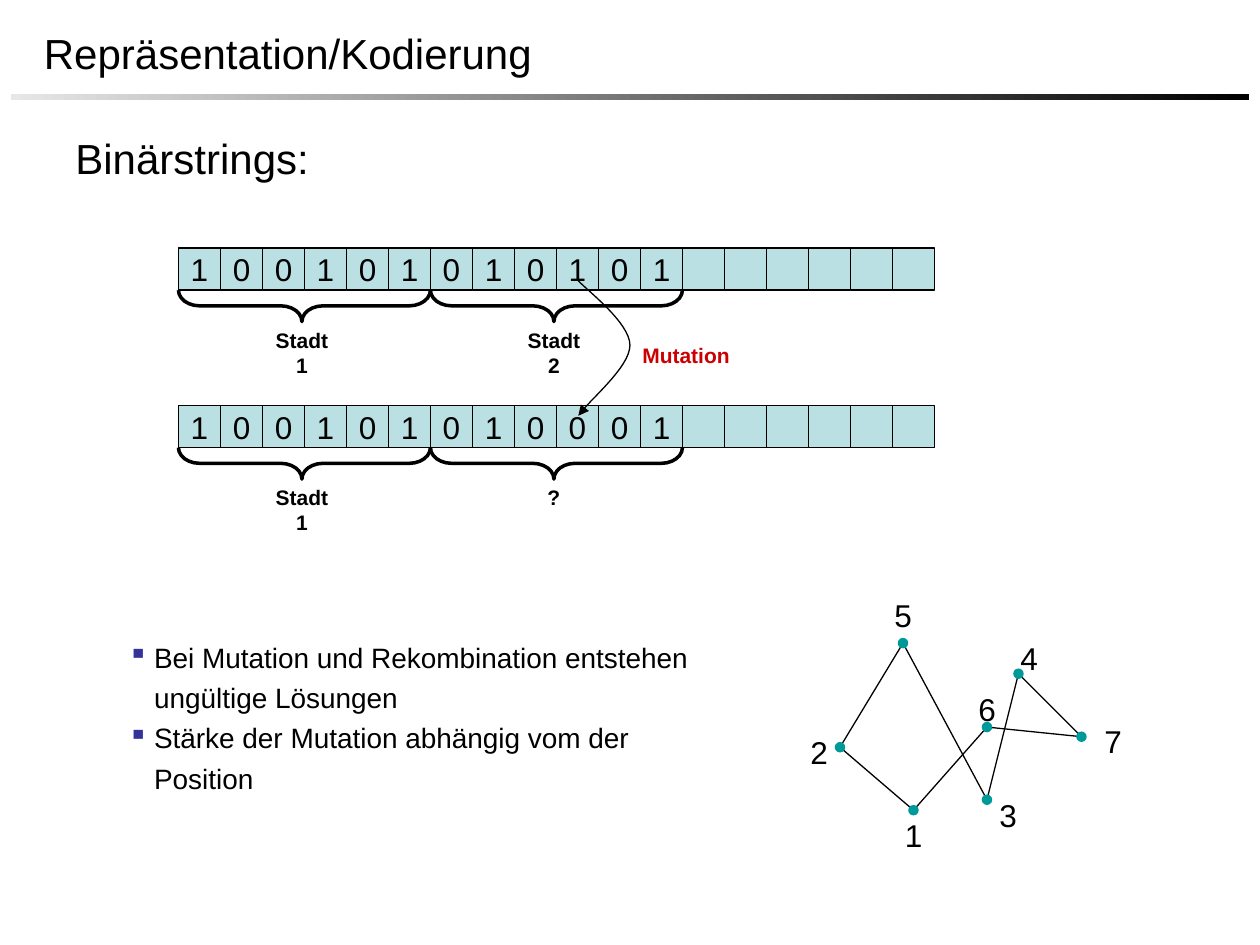
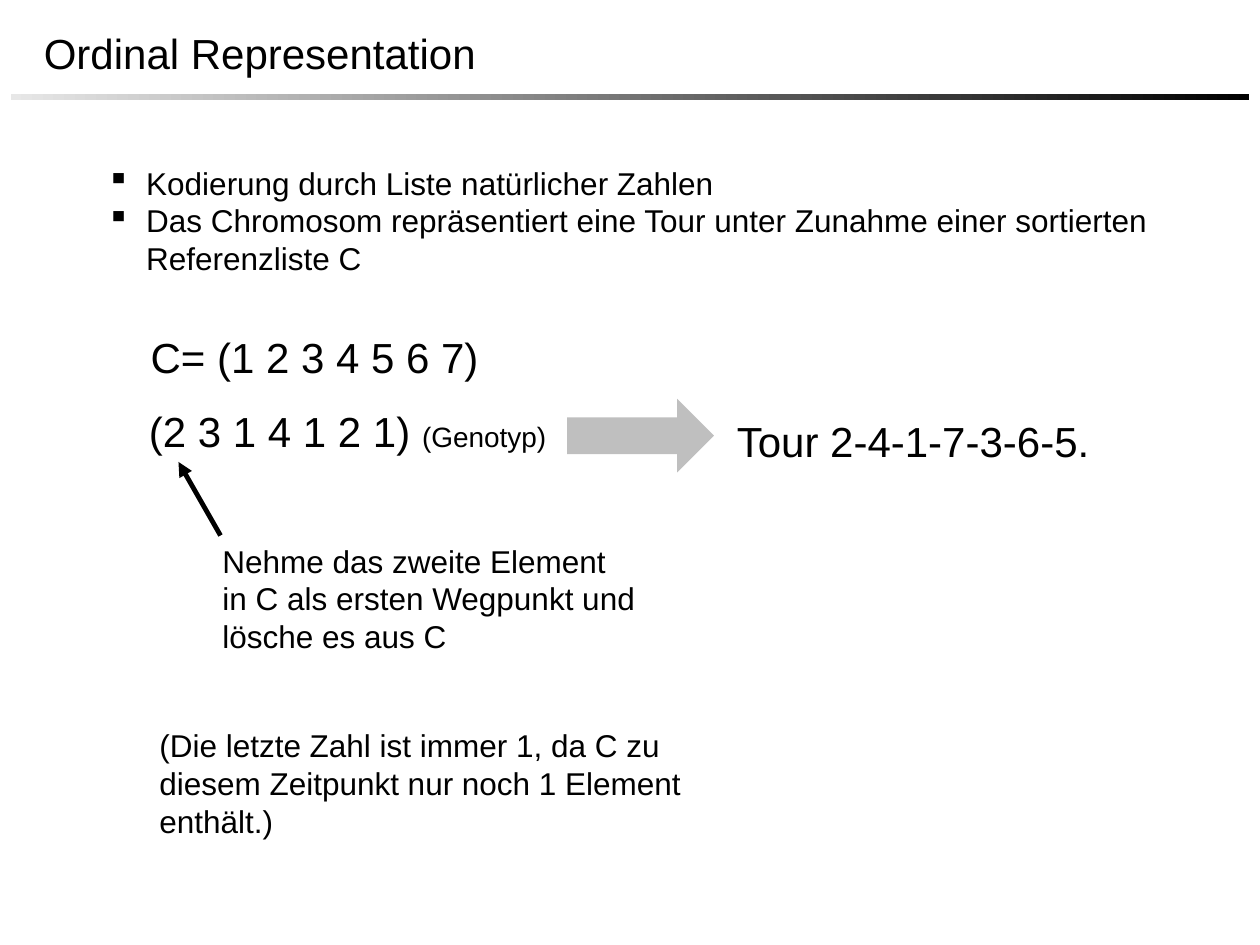
"""Builds two slides on binary and ordinal encodings of tours."""
from lxml import etree
from pptx import Presentation
from pptx.dml.color import RGBColor
from pptx.enum.shapes import MSO_CONNECTOR, MSO_SHAPE
from pptx.enum.text import MSO_ANCHOR, PP_ALIGN
from pptx.oxml.ns import qn
from pptx.util import Pt

STRAIGHT = MSO_CONNECTOR.STRAIGHT
RECTANGLE, OVAL = MSO_SHAPE.RECTANGLE, MSO_SHAPE.OVAL
BRACE, BLOCK_ARROW = MSO_SHAPE.LEFT_BRACE, MSO_SHAPE.RIGHT_ARROW
TOP, MIDDLE = MSO_ANCHOR.TOP, MSO_ANCHOR.MIDDLE
LEFT, CENTER = PP_ALIGN.LEFT, PP_ALIGN.CENTER
FONT = "Arial"
COLORS = {
    "black": "000000", "band": "E7E7E7", "cell": "BBE0E3", "city": "009999",
    "mutation": "CC0000", "bullet": "333399", "arrow": "808080",
}
RGB = {name: RGBColor.from_string(value) for name, value in COLORS.items()}


def write(box, paragraphs, size, color="black", bold=False, align=LEFT, anchor=TOP,
          wrap=False, spacing=None, indent=0, bullet="black"):
    """Fill a shape with paragraphs, each a list of (text, size) runs or a string."""
    frame = box.text_frame
    frame.word_wrap = wrap
    frame.vertical_anchor = anchor
    for number, content in enumerate(paragraphs):
        para = frame.add_paragraph() if number else frame.paragraphs[0]
        para.alignment = align
        if spacing:
            para.line_spacing = spacing
        if indent:
            props = para._p.get_or_add_pPr()
            props.set("marL", str(Pt(indent)))
            props.set("indent", str(-Pt(indent)))
            tint = etree.SubElement(props, qn("a:buClr"))
            etree.SubElement(tint, qn("a:srgbClr"), val=COLORS[bullet])
            etree.SubElement(props, qn("a:buChar"), char="▪")
        for text, points in [(content, size)] if isinstance(content, str) else content:
            span = para.add_run()
            span.text = text
            span.font.name = FONT
            span.font.size = Pt(points)
            span.font.bold = bold
            span.font.color.rgb = RGB[color]


def draw_line(page, start, end, width):
    """Draw a straight black line between two points."""
    line = page.shapes.add_connector(STRAIGHT, *map(Pt, start + end))
    line.line.color.rgb = RGB["black"]
    line.line.width = Pt(width)
    etree.SubElement(line._element.spPr, qn("a:effectLst"))
    return line


deck = Presentation()
deck.slide_width, deck.slide_height = Pt(720), Pt(540)
pages = []
for title in ("Repräsentation/Kodierung", "Ordinal Representation"):
    page = deck.slides.add_slide(deck.slide_layouts[6])
    band = page.shapes.add_shape(RECTANGLE, Pt(6), Pt(54), Pt(708), Pt(3))
    band.shadow.inherit = False
    band.line.fill.background()
    band.fill.gradient()
    band.fill.gradient_angle = 0
    for stop, name in zip(band.fill.gradient_stops, ("band", "black")):
        stop.color.rgb = RGB[name]
    heading = page.shapes.add_textbox(Pt(18), Pt(6), Pt(648), Pt(48))
    write(heading, [title], 24, anchor=MIDDLE, wrap=True)
    pages.append(page)
binary_page, ordinal_page = pages

shapes = binary_page.shapes
write(shapes.add_textbox(Pt(36), Pt(72), Pt(148.5), Pt(36)), ["Binärstrings:"], 24)
write(shapes.add_textbox(Pt(66), Pt(358.5), Pt(360), Pt(124)),
      ["Bei Mutation und Rekombination entstehen ungültige Lösungen",
       "Stärke der Mutation abhängig vom der Position"],
      16, wrap=True, spacing=1.2, indent=15, bullet="bullet")

CELL, STRING_LEFT, GENE_BITS, STRING_BITS = 24, 102, 6, 18
strings = [
    (141.75, "100101010101", ("Stadt 1", "Stadt 2")),
    (231.75, "100101010001", ("Stadt 1", "?")),
]
for top, bits, genes in strings:
    for column, bit in enumerate(bits.ljust(STRING_BITS)):
        cell = shapes.add_shape(
            RECTANGLE, Pt(STRING_LEFT + column * CELL), Pt(top), Pt(CELL), Pt(CELL))
        cell.shadow.inherit = False
        cell.fill.solid()
        cell.fill.fore_color.rgb = RGB["cell"]
        cell.line.color.rgb = RGB["black"]
        cell.line.width = Pt(0.75)
        if bit.strip():
            write(cell, [bit], 18, align=CENTER, anchor=MIDDLE)
    gene_width = GENE_BITS * CELL
    for index, gene in enumerate(genes):
        center = STRING_LEFT + (index + 0.5) * gene_width
        brace = shapes.add_shape(BRACE, Pt(center - 9), Pt(top + 33 - gene_width / 2),
                                 Pt(18), Pt(gene_width))
        brace.rotation = 270
        brace.adjustments[0], brace.adjustments[1] = 0.67, 0.49
        brace.shadow.inherit = False
        brace.fill.background()
        brace.line.color.rgb = RGB["black"]
        brace.line.width = Pt(2)
        label = shapes.add_textbox(Pt(center - 28.5), Pt(top + 41.75), Pt(54), Pt(21.6))
        write(label, [gene], 12, bold=True, align=CENTER)
write(shapes.add_textbox(Pt(360), Pt(192), Pt(64.8), Pt(21.6)), ["Mutation"], 12,
      color="mutation", bold=True)

curves = [
    ((330, 160), (335, 165.6), (360, 184.3), (360, 197.3)),
    ((360, 197.3), (360, 210.2), (336.2, 229), (330.5, 237.6)),
]
STEPS = 16
curve_points = []
for curve in curves:
    for step in range(1, STEPS + 1):
        t = step / STEPS
        weights = ((1 - t) ** 3, 3 * t * (1 - t) ** 2, 3 * t ** 2 * (1 - t), t ** 3)
        curve_points.append(tuple(
            Pt(sum(weight * value for weight, value in zip(weights, axis)))
            for axis in zip(*curve)))
builder = shapes.build_freeform(*map(Pt, curves[0][0]))
builder.add_line_segments(curve_points, close=False)
mutation_arrow = builder.convert_to_shape()
mutation_arrow.shadow.inherit = False
mutation_arrow.fill.background()
mutation_arrow.line.color.rgb = RGB["black"]
mutation_arrow.line.width = Pt(0.75)

tour = [
    ("5", (516, 367.5), (504, 337)),
    ("2", (480, 427), (456, 415.5)),
    ("1", (522, 463), (510, 463)),
    ("6", (564, 415.5), (552, 391)),
    ("7", (618, 421), (624, 409)),
    ("4", (582, 385), (576, 361.5)),
    ("3", (564, 457), (564, 451.5)),
]
for (_, start, _), (_, end, _) in zip(tour, tour[1:] + tour[:1]):
    draw_line(binary_page, start, end, 0.75)
for city, (x, y), (label_left, label_top) in tour:
    dot = shapes.add_shape(OVAL, Pt(x - 3), Pt(y - 3), Pt(6), Pt(6))
    dot.shadow.inherit = False
    dot.fill.solid()
    dot.fill.fore_color.rgb = RGB["city"]
    dot.line.fill.background()
    write(shapes.add_textbox(Pt(label_left), Pt(label_top), Pt(24.5), Pt(29)), [city], 18)

shapes = ordinal_page.shapes
write(shapes.add_textbox(Pt(54), Pt(90), Pt(612), Pt(72)),
      ["Kodierung durch Liste natürlicher Zahlen",
       "Das Chromosom repräsentiert eine Tour unter Zunahme einer sortierten "
       "Referenzliste C"],
      18, wrap=True, indent=22.5)
notes = [
    ((79, 186, 202, 36), "C= (1 2 3 4 5 6 7)", 24, False),
    ((78, 228, 378, 36), [("(2 3 1 4 1 2 1) ", 24), ("(Genotyp)", 16)], 24, True),
    ((414, 234, 219, 36), "Tour 2-4-1-7-3-6-5.", 24, False),
    ((120, 306, 250.5, 72),
     "Nehme das zweite Element in C als ersten Wegpunkt und lösche es aus C", 18, True),
    ((84, 411.5, 360, 72),
     "(Die letzte Zahl ist immer 1, da C zu diesem Zeitpunkt nur noch 1 Element enthält.)",
     18, True),
]
for area, content, size, wrap in notes:
    write(shapes.add_textbox(*map(Pt, area)), [content], size, wrap=wrap)

pointer = draw_line(ordinal_page, (126, 306), (102, 264), 2.75)
block_arrow = shapes.add_shape(BLOCK_ARROW, Pt(324), Pt(228), Pt(84), Pt(42))
block_arrow.shadow.inherit = False
block_arrow.line.fill.background()
block_arrow.fill.solid()
block_arrow.fill.fore_color.rgb = RGB["arrow"]
fill_color = block_arrow._element.spPr.find(qn("a:solidFill")).find(qn("a:srgbClr"))
etree.SubElement(fill_color, qn("a:alpha"), val="50000")

for arrow in (mutation_arrow, pointer):
    outline = arrow._element.spPr.find(qn("a:ln"))
    etree.SubElement(outline, qn("a:tailEnd"), type="triangle")

deck.save("out.pptx")
